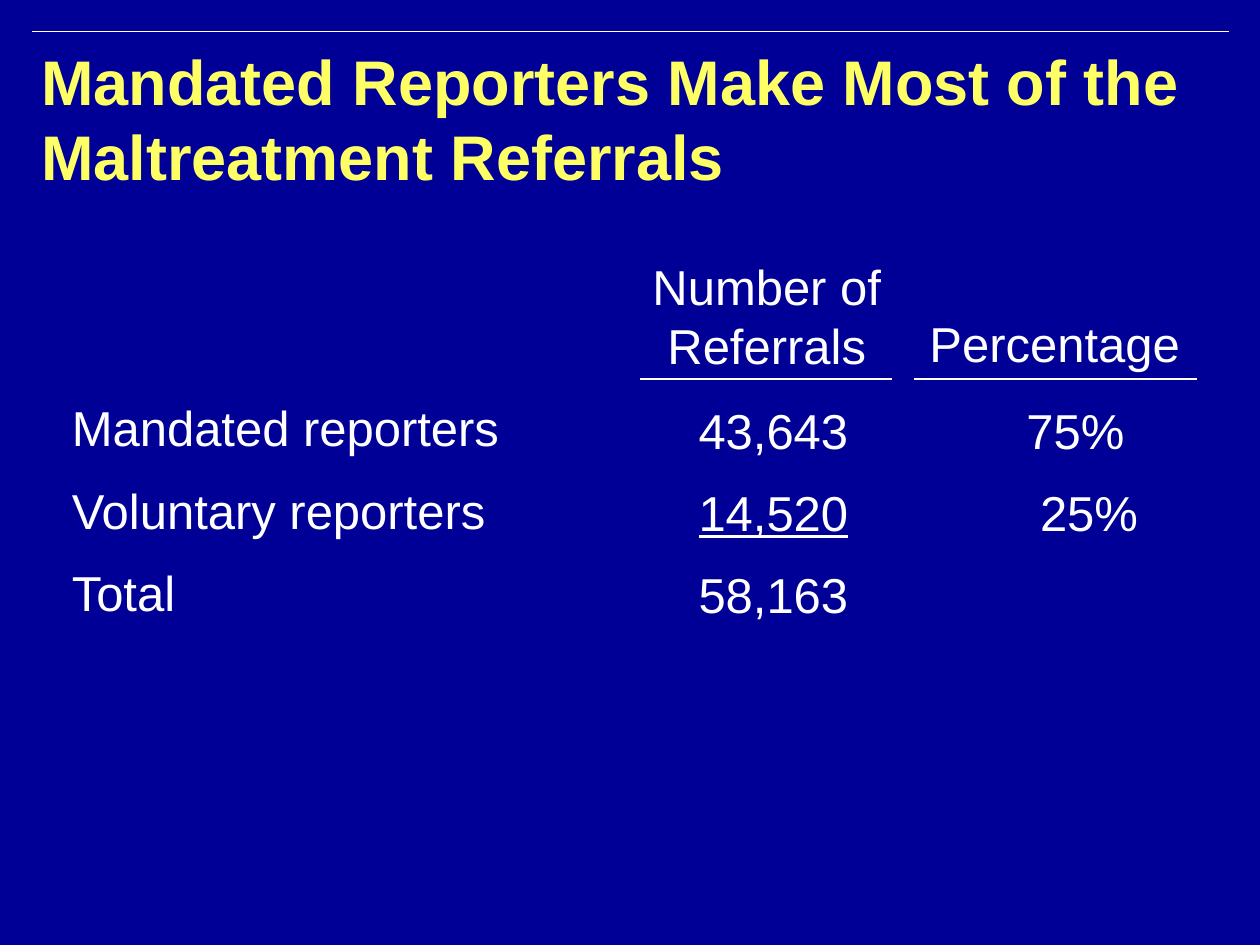
from dataclasses import dataclass

from lxml import etree
from pptx import Presentation
from pptx import util as u
from pptx.dml.color import RGBColor
from pptx.enum import text
from pptx.oxml import ns

WHITE = "FFFFFF"
YELLOW = "FEFF65"
NAVY = "000096"
ALIGN = text.PP_ALIGN
ANCHOR = text.MSO_ANCHOR


@dataclass(frozen=True)
class Column:
    heading: str
    heading_box: tuple[float, float, float, float]
    rule: tuple[float, float]
    values: tuple[str, ...]
    values_left: float
    underlined: int | None = None


COLUMNS = (
    Column("Number of Referrals", (4.92, 1.99, 2.33, 1.04), (5.08, 7.08),
           ("43,643", "14,520", "58,163"), 5.33, underlined=1),
    Column("Percentage", (7.08, 2.44, 2.58, 0.57), (7.25, 9.5),
           ("75% ", "25%"), 7.63),
)
ROW_LABELS = ("Mandated reporters", "Voluntary reporters", "Total")
LIST_FORMAT = {"inset_left": 0, "line_spacing": 0.9, "space_before": 16.8}
RULE_TOP = 3.01


def color(value: str) -> RGBColor:
    return RGBColor.from_string(value)


def add_text(shapes, lines: tuple[str, ...], box: tuple[float, float, float, float], *,
             size: float = 28, fill: str = WHITE, bold: bool = False, align=ALIGN.LEFT,
             anchor=ANCHOR.TOP, inset_left: float = 0.1, line_spacing: float = 1.0,
             space_before: float = 0, underlined: int | None = None):
    shape = shapes.add_textbox(*map(u.Inches, box))
    frame = shape.text_frame
    frame.word_wrap = True
    frame.vertical_anchor = anchor
    frame.margin_left = u.Inches(inset_left)
    for index, line in enumerate(lines):
        paragraph = frame.add_paragraph() if index else frame.paragraphs[0]
        paragraph.alignment = align
        paragraph.line_spacing = line_spacing
        paragraph.space_before = u.Pt(space_before if index else 0)
        run = paragraph.add_run()
        run.text = line
        font = run.font
        font.name = "Arial"
        font.size = u.Pt(size)
        font.bold = bold
        font.underline = index == underlined
        font.color.rgb = color(fill)
    return shape


def add_rule(shapes, left: float, right: float, top: float, width: float) -> None:
    line = shapes.add_connector(1, u.Inches(left), u.Inches(top), u.Inches(right), u.Inches(top))
    line.line.color.rgb = color(WHITE)
    line.line.width = u.Pt(width)
    etree.SubElement(line._element.spPr, ns.qn("a:effectLst"))


def add_text_shadow(shape) -> None:
    properties = shape.text_frame.paragraphs[0].runs[0]._r.get_or_add_rPr()
    effects = etree.Element(ns.qn("a:effectLst"))
    shadow = etree.SubElement(effects, ns.qn("a:outerShdw"),
                              dist="38100", dir="2700000", algn="tl")
    etree.SubElement(shadow, ns.qn("a:srgbClr"), val="000000")
    properties.find(ns.qn("a:solidFill")).addnext(effects)


def add_column(slide, column: Column) -> None:
    shapes = slide.shapes.add_group_shape().shapes
    add_text(shapes, (column.heading,), column.heading_box, align=ALIGN.CENTER)
    add_rule(shapes, *column.rule, RULE_TOP, 1.25)
    add_text(shapes, column.values, (column.values_left, 3.18, 1.5, 4.83),
             align=ALIGN.RIGHT, underlined=column.underlined, **LIST_FORMAT)


def main() -> None:
    presentation = Presentation()
    presentation.slide_width = u.Inches(10)
    presentation.slide_height = u.Inches(7.5)
    slide = presentation.slides.add_slide(presentation.slide_layouts[6])
    background = slide.background.fill
    background.solid()
    background.fore_color.rgb = color(NAVY)

    add_rule(slide.shapes, 0.25, 9.75, 0.25, 1)
    title = add_text(slide.shapes, ("Mandated Reporters Make Most of the Maltreatment Referrals",),
                     (0.33, 0.34, 9.33, 1.19), size=36, fill=YELLOW, bold=True,
                     anchor=ANCHOR.MIDDLE, inset_left=0)
    add_text_shadow(title)
    add_text(slide.shapes, ROW_LABELS, (0.57, 3.16, 4.75, 3.92), **LIST_FORMAT)
    for column in COLUMNS:
        add_column(slide, column)
    presentation.save("out.pptx")


if __name__ == "__main__":
    main()
